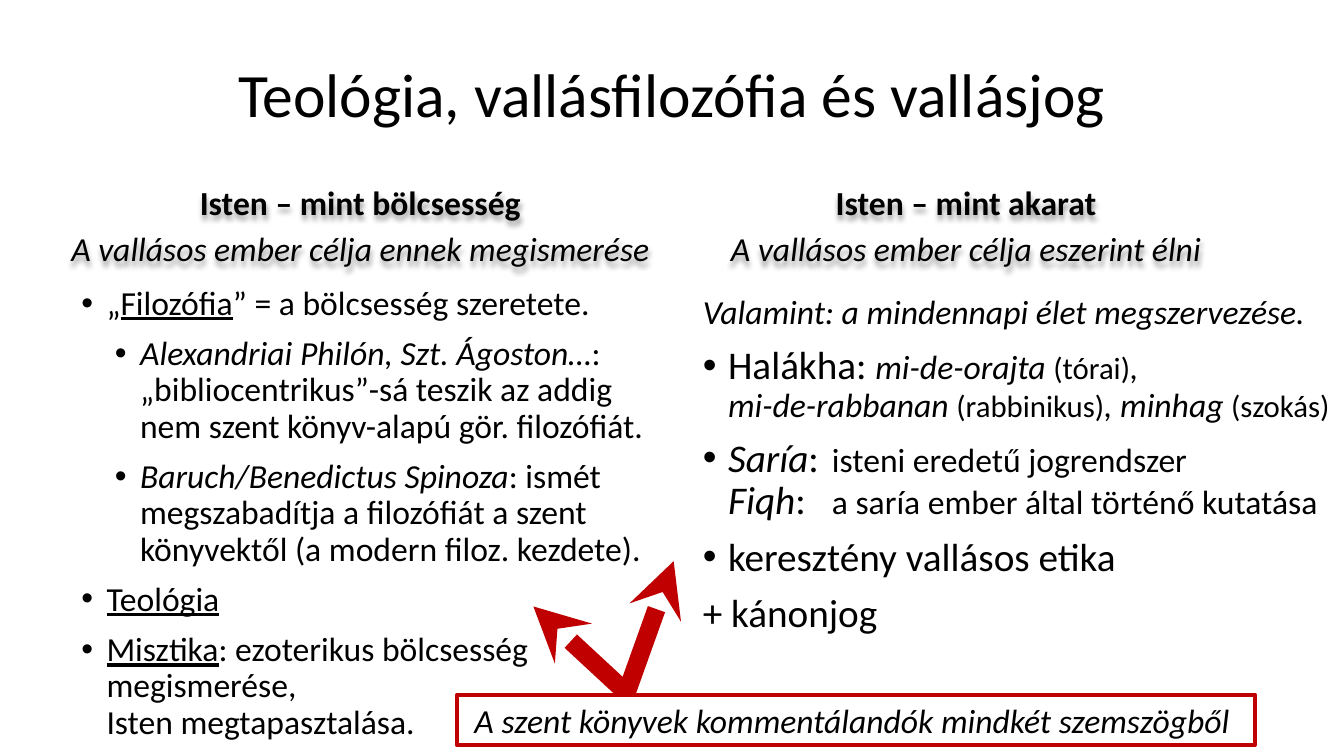
from lxml.etree import SubElement as Sub
from pptx import Presentation
from pptx.dml.color import RGBColor as Rgb
from pptx.enum.shapes import MSO_CONNECTOR as Conn, MSO_SHAPE as Shape
from pptx.enum.text import MSO_ANCHOR as Anchor, PP_ALIGN as Align
from pptx.oxml.ns import qn
from pptx.util import Inches, Pt

COLORS = {"ink": "000000", "paper": "FFFFFF", "red": "C00000"}
FONT = "Calibri"
WIDE, HIGH = 13.33, 7.5
COLS, ROWS = 160, 90
STEP = 0.25

LEFT = [
    (1, [("„", ""), ("Filozófia", "u"), ("” = a bölcsesség szeretete.", "")]),
    (2, [("Alexandriai Philón, Szt. Ágoston…", "i"),
         (": „bibliocentrikus”-sá teszik az addig "
          "nem szent könyv-alapú gör. filozófiát.", "")]),
    (2, [("Baruch/Benedictus Spinoza", "i"),
         (": ismét megszabadítja a filozófiát a szent "
          "könyvektől (a modern filoz. kezdete).", "")]),
    (1, [("Teológia", "u")]),
    (1, [("Misztika", "u"),
         (": ezoterikus bölcsesség megismerése, \nIsten megtapasztalása.", "")]),
]
RIGHT = [
    (0, [("Valamint: a mindennapi élet megszervezése.", "i")]),
    (1, [("Halákha: ", "", 28), ("mi-de-orajta ", "i"), ("(tórai)", "", 22),
         (", \nmi-de-rabbanan ", "i"), ("(rabbinikus)", "", 22),
         (", minhag ", "i"), ("(szokás)", "", 22)]),
    (1, [("Saría", "i", 28), (":", "", 28), (" \tisteni eredetű jogrendszer\n", ""),
         ("Fiqh", "i", 28), (": \t", "", 28),
         ("a saría ember által történő kutatása", "")]),
    (1, [("keresztény vallásos etika", "", 28)]),
    (0, [("+ kánonjog", "", 28)]),
]


def place(*grid):
    """Turn grid columns and rows, taken in turn, into lengths."""
    cell = WIDE / COLS, HIGH / ROWS
    return [Inches(n * cell[i % 2]) for i, n in enumerate(grid)]


def color(name):
    """Look up a named colour."""
    return Rgb.from_string(COLORS[name])


def bullet(para, level, tab=None):
    """Give a paragraph a hanging bullet and perhaps a tab stop."""
    props = para._p.get_or_add_pPr()
    props.set("marL", str(Inches(STEP + (level - 1) / 3)))
    props.set("indent", str(-Inches(STEP)))
    Sub(props, qn("a:buFont"), typeface="Arial")
    Sub(props, qn("a:buChar"), char="•")
    if tab:
        Sub(Sub(props, qn("a:tabLst")), qn("a:tab"), pos=str(Inches(tab)), algn="l")


def write(shape, paras, size=24, align=Align.LEFT, lead=0.9, gap=10,
          anchor=Anchor.TOP, tab=None):
    """Fill a shape with paragraphs, each a level and its styled runs."""
    frame = shape.text_frame
    frame.word_wrap = True
    frame.vertical_anchor = anchor
    for n, (level, runs) in enumerate(paras):
        para = frame.add_paragraph() if n else frame.paragraphs[0]
        para.alignment, para.line_spacing = align, lead
        para.space_before = Pt(gap)
        if level:
            has_tab = any("\t" in run[0] for run in runs)
            bullet(para, level, tab if has_tab else None)
        for words, style, *own in runs:
            for k, line in enumerate(words.split("\n")):
                if k:
                    para.add_line_break()
                if not line:
                    continue
                run = para.add_run()
                run.text = line
                font = run.font
                font.name, font.size = FONT, Pt(own[0] if own else size)
                font.color.rgb = color("ink")
                font.bold, font.italic = "b" in style, "i" in style
                font.underline = "u" in style


def shade(shape):
    """Cast a soft shadow below the text of an unfilled box."""
    list_ = Sub(shape._element.spPr, qn("a:effectLst"))
    outer = Sub(list_, qn("a:outerShdw"), blurRad=str(Pt(4)), dist=str(Pt(3)),
                dir="5400000", algn="t", rotWithShape="0")
    ink = Sub(outer, qn("a:srgbClr"), val=COLORS["ink"])
    Sub(ink, qn("a:alpha"), val="40000")


def title(slide, box, words):
    """Centre the slide title in its box."""
    write(slide.shapes.add_textbox(*place(*box)), [(0, [(words, "")])],
          size=44, align=Align.CENTER, gap=0, anchor=Anchor.MIDDLE)


def column(slide, box, head, aim, body, drop, width):
    """Place a shaded heading and, below it, a list of points."""
    x, y, w, h = box
    top = slide.shapes.add_textbox(*place(x, y, w, 10.8))
    write(top, [(0, [(head, "b")]), (0, [(aim, "i")])],
          align=Align.CENTER, lead=0.8)
    shade(top)
    area = place(x + 1.5, y + drop, width, h - drop)
    write(slide.shapes.add_textbox(*area), body, tab=1.28)


def arrow(slide, ends):
    """Draw a thick red arrow between two grid points."""
    line = slide.shapes.add_connector(Conn.STRAIGHT, *place(*ends))
    line.line.color.rgb, line.line.width = color("red"), Pt(13)
    Sub(line.line._get_or_add_ln(), qn("a:tailEnd"), type="stealth")
    Sub(line._element.spPr, qn("a:effectLst"))


def note(slide, box, words):
    """Draw the framed remark, with an arrow to each column."""
    x, y, w, h = box
    arrow(slide, (x + 20.1, y - 0.3, x + 9.1, y - 10.5))
    arrow(slide, (x + 19.9, y + 0.6, x + 25.8, y - 15.9))
    frame = slide.shapes.add_shape(Shape.RECTANGLE, *place(*box))
    frame.shadow.inherit = False
    frame.fill.solid()
    frame.fill.fore_color.rgb = color("paper")
    frame.line.color.rgb, frame.line.width = color("red"), Pt(3)
    write(frame, [(0, [(words, "i")])], lead=1.0, gap=0)


def main():
    """Build and save the slide."""
    deck = Presentation()
    deck.slide_width, deck.slide_height = Inches(WIDE), Inches(HIGH)
    slide = deck.slides.add_slide(deck.slide_layouts[6])
    title(slide, (11, 2.9, 138, 17.4), "Teológia, vallásfilozófia és vallásjog")
    column(slide, (7, 22, 71.8, 67.5), "Isten – mint bölcsesség",
           "A vallásos ember célja ennek megismerése", LEFT, 11.5, 69.4)
    column(slide, (81, 22, 68, 59.7), "Isten – mint akarat",
           "A vallásos ember célja eszerint élni", RIGHT, 12.6, 77.5)
    note(slide, (54.4, 82.7, 95, 6),
         " A szent könyvek kommentálandók mindkét szemszögből")
    deck.save("out.pptx")


if __name__ == "__main__":
    main()
